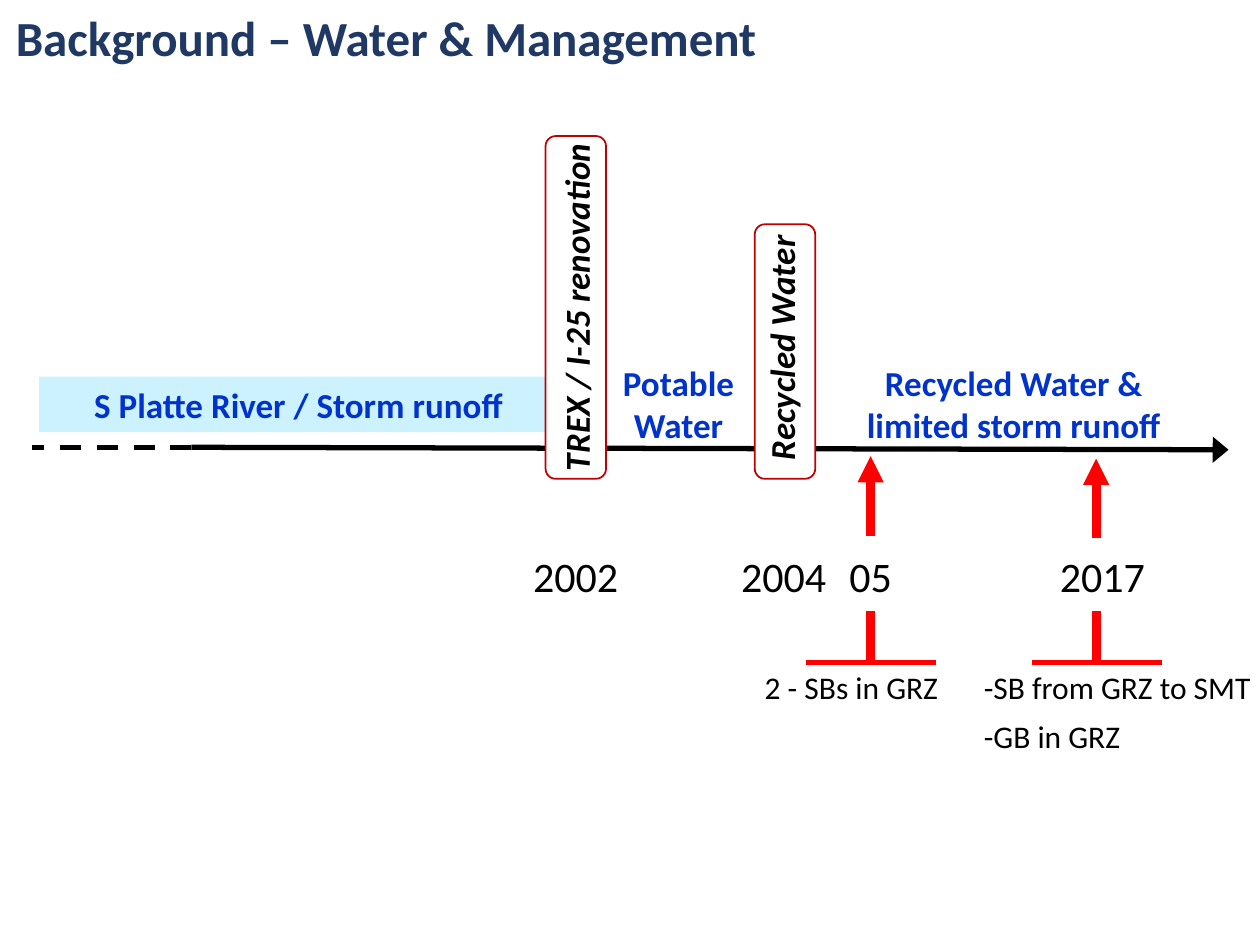
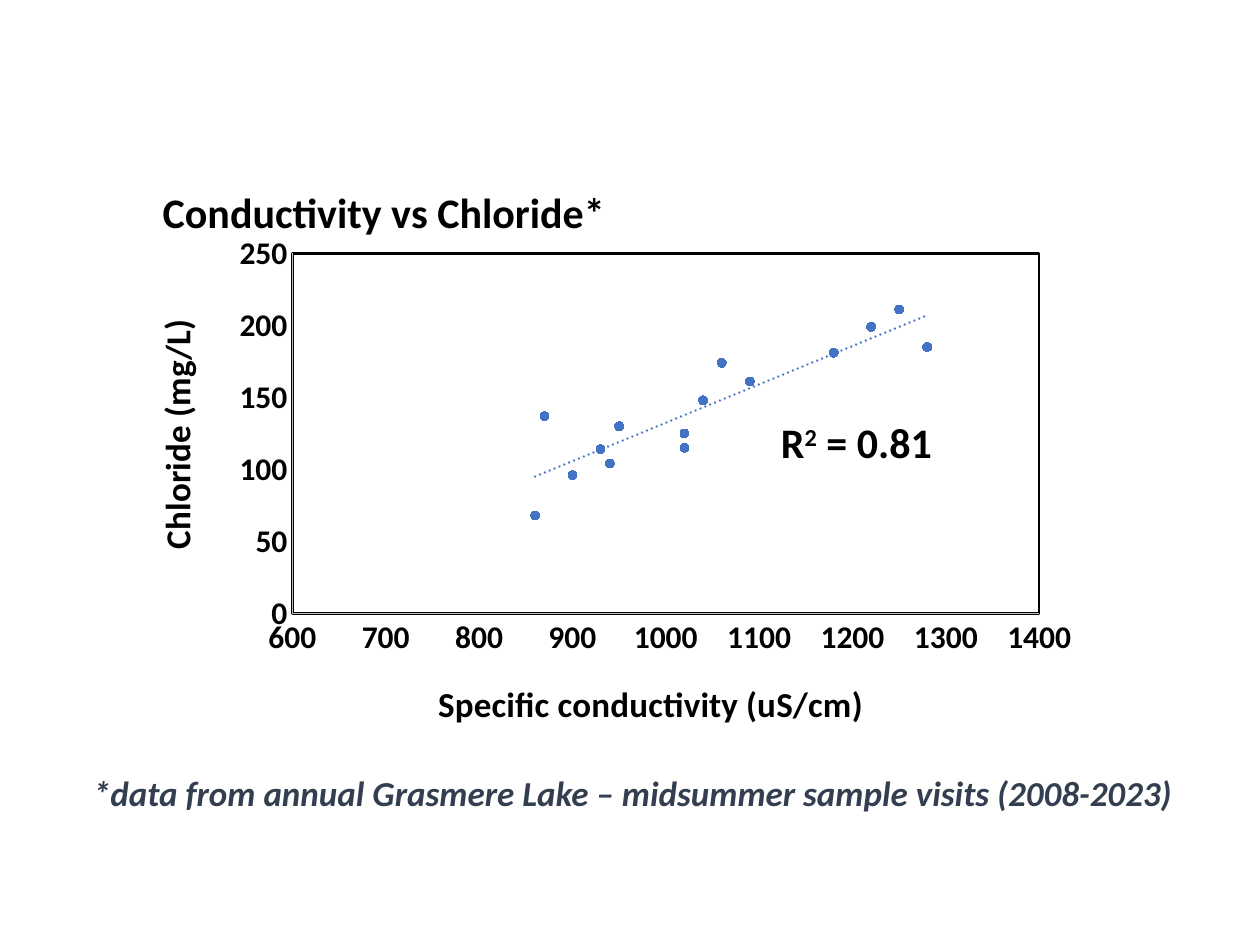
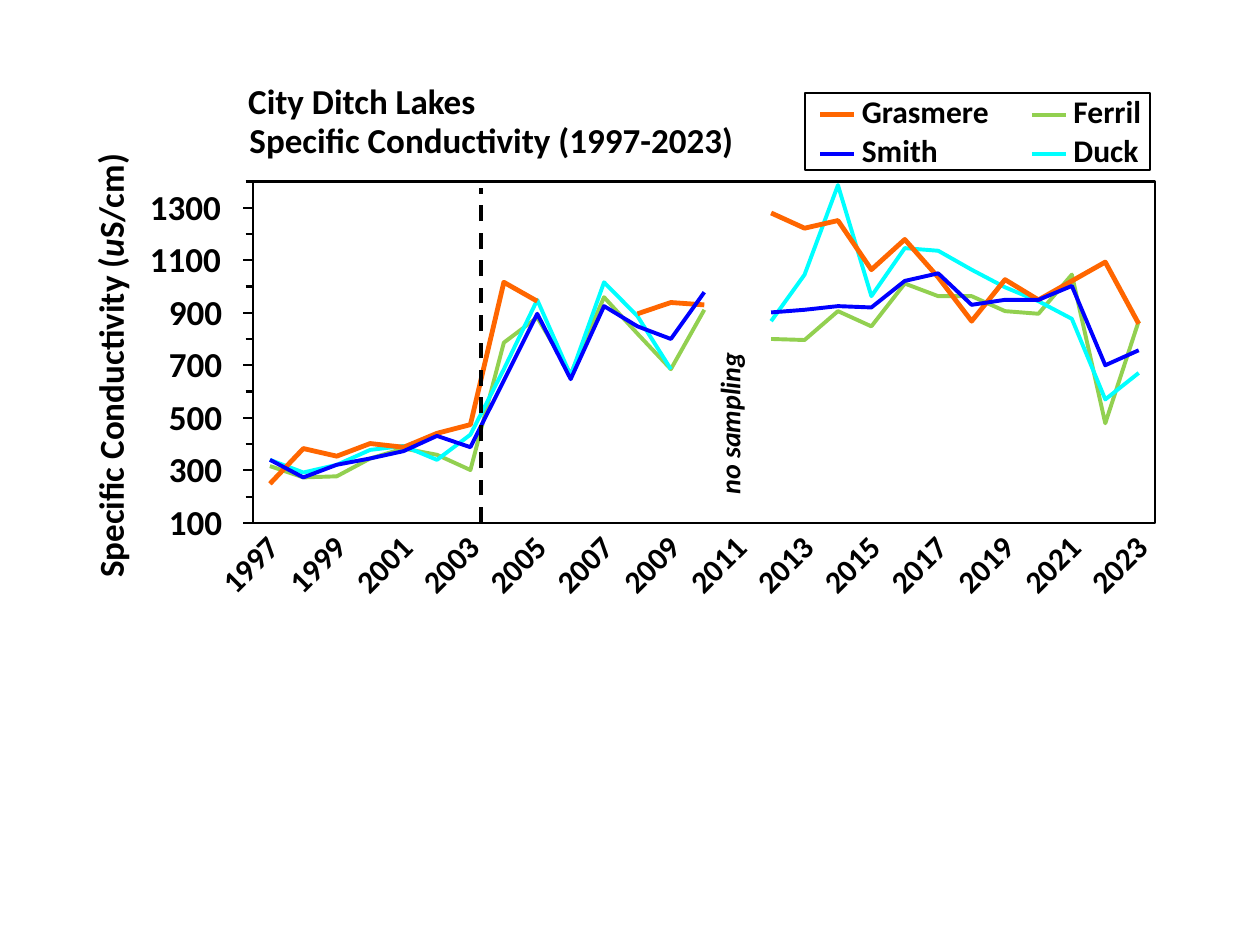
from itertools import groupby

from lxml import etree
from pptx import Presentation
from pptx import util as u
from pptx.chart.data import XyChartData
from pptx.dml.color import RGBColor
from pptx.enum import chart as charts, dml, shapes, text
from pptx.oxml import parse_xml
from pptx.oxml.ns import nsdecls, qn

FONT = "Calibri"
COLORS = {
    "black": "000000", "white": "FFFFFF", "title": "203864", "water": "0033CC",
    "river": "9BE5FF", "card": "C00000", "event": "FF0000", "note": "333F50",
    "point": "4472C4", "axis": "BFBFBF", "orange": "FF6600", "blue": "0000FF",
    "green": "92D050", "cyan": "00FFFF",
}
LEFT, CENTER, RIGHT = text.PP_ALIGN.LEFT, text.PP_ALIGN.CENTER, text.PP_ALIGN.RIGHT
TOP, MIDDLE = text.MSO_ANCHOR.TOP, text.MSO_ANCHOR.MIDDLE

# Slide 1: boxes are (left, top, width, height) in inches
TITLE = "Background – Water & Management"
RIVER = ("S Platte River / Storm runoff", (0.31, 2.99, 4.12, 0.44))
SUPPLIES = [
    ("Potable Water", (4.67, 2.82, 1.43, 0.77)),
    ("Recycled Water & limited storm runoff", (6.74, 2.82, 2.61, 0.77)),
]
CARDS = [  # label, card left, card top, label box before it is turned
    ("TREX / I-25 renovation", 4.33, 1.08, (3.14, 2.22, 2.86, 0.44)),
    ("Recycled Water", 5.99, 1.78, (5.19, 2.54, 2.02, 0.44)),
]
CARD_WIDTH, CARD_BOTTOM = 0.48, 3.8
YEARS = [("2002", 4.57, 1.04), ("2004", 6.22, 1.03), ("05", 6.91, 0.59), ("2017", 8.75, 1.03)]
EVENTS = [(6.91, 3.62), (8.7, 3.64)]  # centre, arrow tip
NOTES = [
    ("2 - SBs in GRZ", (5.97, 5.25, 1.59, 0.4)),
    ("-SB from GRZ to SMT", (7.71, 5.25, 2.4, 0.4)),
    ("-GB in GRZ", (7.71, 5.64, 1.38, 0.4)),
]

# Slide 2
SAMPLES = [  # conductivity, chloride
    (900, 96), (940, 104), (930, 114), (1280, 185), (1220, 199), (1250, 211),
    (1060, 174), (1180, 181), (1040, 148), (870, 137), (1020, 125), (950, 130),
    (1020, 115), (1090, 161), (860, 68),
]
CHART_BOX = (1.08, 1.4, 7.57, 4.53)
FOOTNOTE = "*data from annual Grasmere Lake – midsummer sample visits (2008-2023)"

# Slide 3
FIRST_YEAR, LAST_YEAR = 1997, 2023
LOW, HIGH = 100, 1400
PLOT = (2.01, 1.44, 7.16, 2.71)
HEADINGS = [("City Ditch Lakes", (1.97, 0.63, 1.82, 0.34)),
            ("Specific Conductivity (1997-2023)", (1.98, 0.94, 3.88, 0.34))]
LAKES = [  # name, colour, line width, one value per year
    ("Ferril", "green", 2.25, [
        316, 273, 277, 345, 383, 359, 301, 786, 882, 666, 959, 820, 685, 911, None, 800,
        796, 906, 848, 1011, 963, 963, 906, 896, 1045, 479, 868]),
    ("Duck", "cyan", 2.25, [
        340, 292, 321, 378, 393, 340, 436, 685, 949, 661, 1016, 887, 685, None, None, 868,
        1045, 1386, 963, 1146, 1136, 1064, 997, 944, 877, 570, 671]),
    ("Grasmere", "orange", 2.75, [
        249, 383, 354, 402, 388, 441, 474, 1016, 944, None, None, 896, 939, 930, None, 1280,
        1222, 1251, 1064, 1179, 1035, 868, 1026, 949, 1021, 1093, 858]),
    ("Smith", "blue", 2.25, [
        340, 273, 321, 345, 373, 431, 388, 642, 896, 647, 925, 848, 800, 978, None, 901,
        911, 925, 920, 1021, 1050, 930, 949, 949, 1002, 700, 757]),
]
LEGEND = {  # left of the key line, its height on the slide, label width
    "Ferril": (8.19, 0.91, 0.6), "Duck": (8.19, 1.22, 0.6),
    "Grasmere": (6.51, 0.91, 1.1), "Smith": (6.51, 1.22, 0.7),
}


def rgb(name):
    return RGBColor.from_string(COLORS[name])


def inches(values):
    return [u.Inches(value) for value in values]


def set_font(font, size, color="black", bold=False, italic=False):
    font.name, font.size, font.bold, font.italic = FONT, u.Pt(size), bold, italic
    font.color.rgb = rgb(color)


def set_line(line, color, width):
    line.color.rgb, line.width = rgb(color), u.Pt(width)


def fill_text(shape, words, size, color="black", bold=False, italic=False,
              align=LEFT, anchor=TOP, inset=None, wrap=True):
    """Write one paragraph; words is a string or a list of run strings."""
    frame = shape.text_frame
    frame.word_wrap, frame.vertical_anchor = wrap, anchor
    frame.auto_size = text.MSO_AUTO_SIZE.SHAPE_TO_FIT_TEXT
    if inset is not None:
        frame.margin_left = frame.margin_top = u.Inches(inset)
        frame.margin_right = frame.margin_bottom = u.Inches(inset)
    para = frame.paragraphs[0]
    para.alignment = align
    set_font(para.font, size, color, bold, italic)
    for span in [words] if isinstance(words, str) else words:
        para.add_run().text = span
    return para


def add_text(slide, words, box, size, rotation=0, **style):
    shape = slide.shapes.add_textbox(*inches(box))
    shape.rotation = rotation
    return fill_text(shape, words, size, **style)


def add_box(slide, kind, box, fill=None, line=None, width=1):
    shape = slide.shapes.add_shape(kind, *inches(box))
    shape.shadow.inherit = False
    if fill:
        shape.fill.solid()
        shape.fill.fore_color.rgb = rgb(fill)
    else:
        shape.fill.background()
    if line:
        set_line(shape.line, line, width)
    else:
        shape.line.fill.background()
    return shape


def add_line(slide, start, end, color="black", width=1.25, dashed=False, head=None):
    """Draw a straight line; head is the width of its arrowhead, if it has one."""
    line = slide.shapes.add_connector(shapes.MSO_CONNECTOR.STRAIGHT, *inches(start + end))
    set_line(line.line, color, width)
    if dashed:
        line.line.dash_style = dml.MSO_LINE.DASH
    properties = line._element.spPr
    if head:
        etree.SubElement(properties.find(qn("a:ln")), qn("a:tailEnd"), type="triangle", w=head)
    etree.SubElement(properties, qn("a:effectLst"))


def add_strokes(slide, strokes, color, width):
    """Draw several open polylines as one freeform."""
    strokes = [[inches(point) for point in stroke] for stroke in strokes]
    builder = slide.shapes.build_freeform(*strokes[0][0])
    for index, stroke in enumerate(strokes):
        if index:
            builder.move_to(*stroke[0])
        builder.add_line_segments(stroke[1:], close=False)
    shape = builder.convert_to_shape()
    shape.shadow.inherit = False
    shape.fill.background()
    set_line(shape.line, color, width)


def build_timeline(deck):
    slide = deck.slides.add_slide(deck.slide_layouts[5])
    title = slide.shapes.title
    title.left, title.top, title.width, title.height = inches((-0.17, 0.01, 6.27, 0.57))
    fill_text(title, TITLE, 28, "title", bold=True, align=RIGHT, anchor=MIDDLE)

    water = dict(size=20, color="water", bold=True, align=CENTER, anchor=MIDDLE)
    river = add_box(slide, shapes.MSO_SHAPE.RECTANGLE, RIVER[1], "river")
    color = river._element.spPr.find(".//" + qn("a:srgbClr"))
    etree.SubElement(color, qn("a:alpha"), val="50000")
    fill_text(river, RIVER[0], **water)
    for label, box in SUPPLIES:
        add_text(slide, label, box, **water)

    add_line(slide, (1.52, 3.55), (9.75, 3.57), width=3, head="lg")
    add_line(slide, (1.52, 3.55), (0.25, 3.55), width=3, dashed=True)
    for label, left, top, label_box in CARDS:
        add_box(slide, shapes.MSO_SHAPE.ROUNDED_RECTANGLE,
                (left, top, CARD_WIDTH, CARD_BOTTOM - top), "white", "card")
        add_text(slide, label, label_box, 20, rotation=270, bold=True, italic=True,
                 align=CENTER, anchor=MIDDLE)
    for year, center, width in YEARS:
        add_text(slide, year, (center - width / 2, 4.32, width, 0.5), 24, align=CENTER)
    for x, tip in EVENTS:
        add_line(slide, (x, tip + 0.63), (x, tip), "event", 5, head="med")
        add_line(slide, (x, 4.85), (x, 5.26), "event", 5)
        add_line(slide, (x - 0.51, 5.26), (x + 0.52, 5.26), "event", 3)
    for note, box in NOTES:
        add_text(slide, note, box, 18)


def place(element, **edges):
    """Give a chart title or plot area a manual layout, in fractions of the chart."""
    layout = element.find(qn("c:layout"))
    if layout is None:
        layout = etree.Element(qn("c:layout"))
        element.insert(0 if element.find(qn("c:tx")) is None else 1, layout)
    manual = etree.SubElement(layout, qn("c:manualLayout"))
    for name, value in edges.items():
        etree.SubElement(manual, qn("c:" + name), val=str(value))


def title_chart_part(part, words, size, x, y):
    """Title a chart or an axis at a fixed place."""
    part.has_title = True
    title = part.chart_title if hasattr(part, "chart_title") else part.axis_title
    para = title.text_frame.paragraphs[0]
    set_font(para.font, size, bold=True)
    para.add_run().text = words
    place(title._element, xMode="edge", yMode="edge", x=x, y=y)


def build_scatter(deck):
    slide = deck.slides.add_slide(deck.slide_layouts[6])
    data = XyChartData()
    points = data.add_series("Series 1")
    for conductivity, chloride in SAMPLES:
        points.add_data_point(conductivity, chloride)
    chart = slide.shapes.add_chart(charts.XL_CHART_TYPE.XY_SCATTER,
                                   *inches(CHART_BOX), data).chart
    chart.has_legend = False
    set_font(chart.font, 10)
    title_chart_part(chart, "Conductivity vs Chloride*", 24, 0.02, 0)

    axes = [
        (chart.category_axis, "Specific conductivity (uS/cm)", 0.31, 0.87, 600, 1400, 100),
        (chart.value_axis, "Chloride (mg/L)", 0.01, 0.24, 0, 250, 50),
    ]
    for axis, words, x, y, low, high, step in axes:
        title_chart_part(axis, words, 20, x, y)
        axis.minimum_scale, axis.maximum_scale, axis.major_unit = low, high, step
        axis.has_major_gridlines = False
        axis.major_tick_mark = axis.minor_tick_mark = charts.XL_TICK_MARK.NONE
        set_font(axis.tick_labels.font, 18, bold=True)
        set_line(axis.format.line, "axis", 0.75)

    plot = chart.plots[0]
    plot.vary_by_categories = False
    series = plot.series[0]
    series.format.line.fill.background()
    series.marker.style, series.marker.size = charts.XL_MARKER_STYLE.CIRCLE, 5
    series.marker.format.fill.solid()
    series.marker.format.fill.fore_color.rgb = rgb("point")
    set_line(series.marker.format.line, "point", 0.75)
    trend = parse_xml(
        f'<c:trendline {nsdecls("c", "a")}><c:spPr><a:ln w="19050" cap="rnd"><a:solidFill>'
        f'<a:srgbClr val="{COLORS["point"]}"/></a:solidFill><a:prstDash val="sysDot"/></a:ln>'
        '</c:spPr><c:trendlineType val="linear"/><c:dispRSqr val="0"/><c:dispEq val="0"/>'
        '</c:trendline>')
    series._element.find(qn("c:xVal")).addprevious(trend)

    area = chart._chartSpace.find(".//" + qn("c:plotArea"))
    place(area, layoutTarget="inner", xMode="edge", yMode="edge",
          x=0.164, y=0.135, w=0.783, h=0.631)
    area.append(parse_xml(
        f'<c:spPr {nsdecls("c", "a")}><a:noFill/><a:ln w="15875"><a:solidFill>'
        f'<a:srgbClr val="{COLORS["black"]}"/></a:solidFill></a:ln></c:spPr>'))

    para = add_text(slide, ["R", "2", " = 0.81"], (6.1, 3.26, 1.93, 0.5), 24, bold=True)
    para.runs[1]._r.get_or_add_rPr().set("baseline", "30000")
    add_text(slide, FOOTNOTE, (0.64, 6.07, 8.9, 0.44), 20,
             color="note", bold=True, italic=True)


def year_x(year):
    return PLOT[0] + PLOT[2] * (year - FIRST_YEAR + 0.5) / (LAST_YEAR - FIRST_YEAR + 1)


def value_y(value):
    return PLOT[1] + PLOT[3] * (HIGH - value) / (HIGH - LOW)


def lake_strokes(values):
    """Split a lake's yearly values into polylines at the missing years."""
    yearly = enumerate(values, FIRST_YEAR)
    return [[(year_x(year), value_y(value)) for year, value in run]
            for known, run in groupby(yearly, lambda pair: pair[1] is not None) if known]


def build_lakes(deck):
    slide = deck.slides.add_slide(deck.slide_layouts[6])
    left, top, width, height = PLOT
    right, bottom = left + width, top + height
    label = dict(bold=True, inset=0)

    add_box(slide, shapes.MSO_SHAPE.RECTANGLE, PLOT, line="black", width=1.25)
    add_line(slide, (left, bottom), (left, top))
    ticks = [[(left - (0.06 if value % 200 == 0 else 0.08), value_y(value)),
              (left, value_y(value))] for value in range(LOW, HIGH + 1, 100)]
    add_strokes(slide, ticks, "black", 1.25)
    add_line(slide, (left, bottom), (right, bottom))
    for name, color, weight, values in LAKES:
        add_strokes(slide, lake_strokes(values), color, weight)

    for value in range(LOW, HIGH, 200):
        digits = len(str(value))
        box = (1.79 - 0.15 * digits, value_y(value) - 0.18, 0.15 * (digits + 1), 0.42)
        add_text(slide, str(value), box, 20, wrap=False, **label)
    for year in range(FIRST_YEAR, LAST_YEAR + 1, 2):
        add_text(slide, str(year), (year_x(year) - 0.43, 4.29, 0.61, 0.3), 18,
                 rotation=315, **label)
    para = add_text(slide, ["Specific Conductivity (", "u", "S/cm)"],
                    (-0.91, 2.63, 3.57, 0.34), 20, rotation=270, **label)
    para.runs[1].font.italic = True
    for heading, box in HEADINGS:
        add_text(slide, heading, box, 20, wrap=False, **label)

    for name, color, weight, values in LAKES:
        x, y, label_width = LEGEND[name]
        add_line(slide, (x, y), (x + 0.27, y), color, weight)
        add_text(slide, name, (x + 0.33, y - 0.18, label_width, 0.3), 18,
                 wrap=False, **label)
    add_box(slide, shapes.MSO_SHAPE.RECTANGLE, (6.39, 0.74, 2.74, 0.61), line="black")
    add_line(slide, (3.82, bottom), (3.82, 1.49), width=2.25, dashed=True)
    add_text(slide, "no sampling", (5.22, 3.22, 1.14, 0.27), 16, rotation=270,
             italic=True, wrap=False, **label)


def main():
    deck = Presentation()
    deck.slide_width, deck.slide_height = u.Inches(10), u.Inches(7.5)
    build_timeline(deck)
    build_scatter(deck)
    build_lakes(deck)
    deck.save("out.pptx")


if __name__ == "__main__":
    main()
